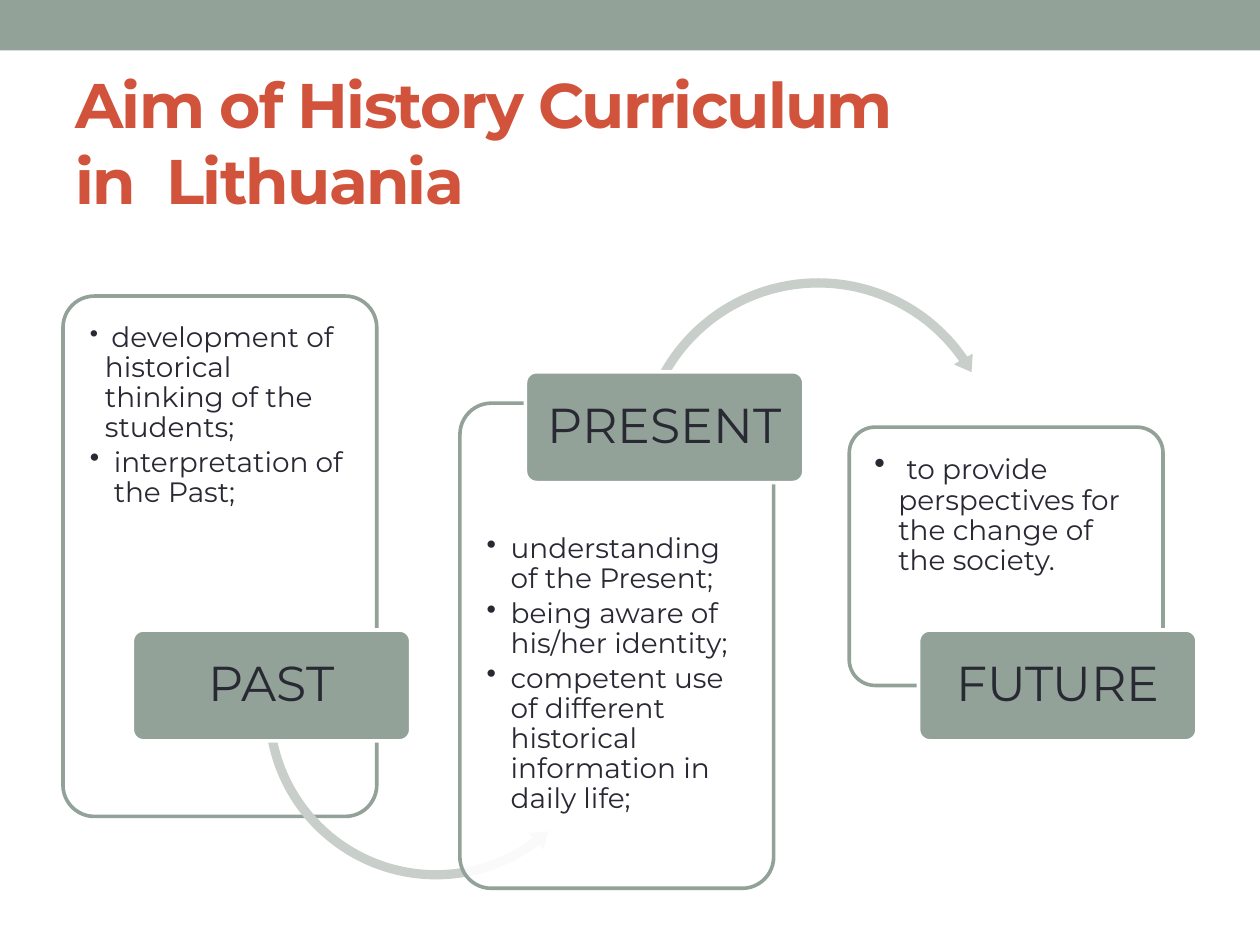
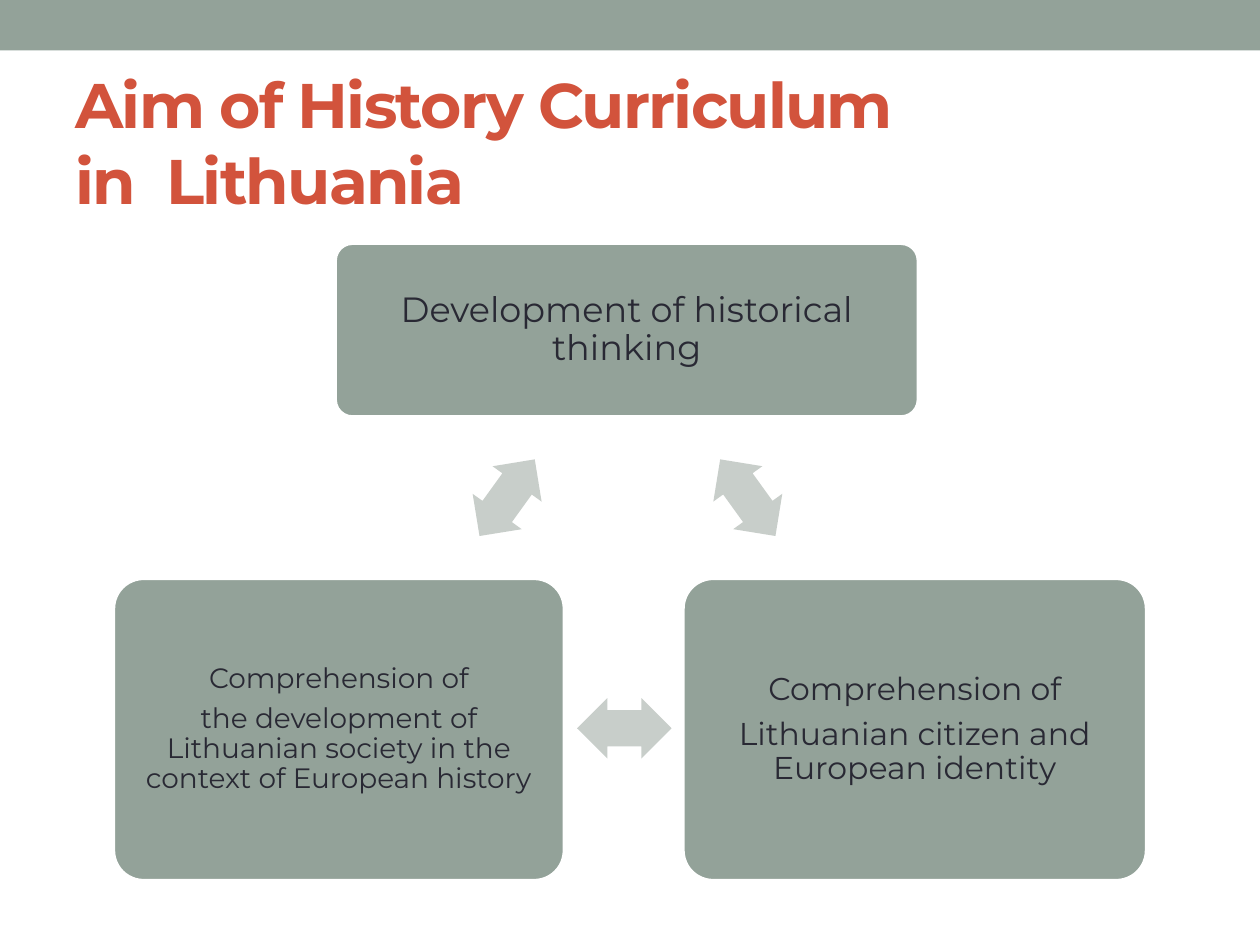
from dataclasses import dataclass

from lxml.etree import SubElement
from pptx import Presentation
from pptx.dml.color import RGBColor
from pptx.enum.shapes import MSO_SHAPE
from pptx.enum.text import MSO_ANCHOR, PP_ALIGN
from pptx.oxml.ns import qn
from pptx.util import Inches, Pt


@dataclass(frozen=True)
class Theme:
    font: str = "Montserrat"
    sage: RGBColor = RGBColor.from_string("93A299")
    pale_sage: RGBColor = RGBColor.from_string("C8CECA")
    red: RGBColor = RGBColor.from_string("D2533C")
    ink: RGBColor = RGBColor.from_string("292934")
    white: RGBColor = RGBColor.from_string("FFFFFF")
    title_size: int = 36
    label_size: int = 28
    bullet_size: int = 16
    outline: float = 2.08
    line_spacing: float = 0.9
    corner: float = 0.1


THEME = Theme()
TITLE = "Aim of History Curriculum\vin  Lithuania"


# Shared helpers
def style_run(run, size, color=THEME.ink, bold=False):
    run.font.name = THEME.font
    run.font.size = Pt(size)
    run.font.color.rgb = color
    run.font.bold = bold


def set_margins(frame, horizontal, vertical):
    frame.word_wrap = True
    frame.margin_left = frame.margin_right = Inches(horizontal)
    frame.margin_top = frame.margin_bottom = Inches(vertical)


def add_block(slide, kind, place, fill, outline=None):
    shape = slide.shapes.add_shape(kind, *map(Inches, place))
    shape.shadow.inherit = False
    shape.fill.solid()
    shape.fill.fore_color.rgb = fill
    if outline is None:
        shape.line.fill.background()
    else:
        shape.line.color.rgb = outline
        shape.line.width = Pt(THEME.outline)
    return shape


def add_round_box(slide, place, fill, outline):
    shape = add_block(slide, MSO_SHAPE.ROUNDED_RECTANGLE, place, fill, outline)
    shape.adjustments[0] = THEME.corner
    return shape


# Band and title on every slide
def add_titled_slide(presentation):
    slide = presentation.slides.add_slide(presentation.slide_layouts[6])
    add_block(slide, MSO_SHAPE.RECTANGLE, (0, 0, 10, 0.4), THEME.sage)
    title = slide.shapes.add_textbox(*map(Inches, (0.5, 0.58, 9, 1.08)))
    frame = title.text_frame
    frame.word_wrap = True
    frame.vertical_anchor = MSO_ANCHOR.MIDDLE
    paragraph = frame.paragraphs[0]
    paragraph.text = TITLE
    for run in paragraph.runs:
        style_run(run, THEME.title_size, THEME.red, bold=True)
        run._r.get_or_add_rPr().set("spc", "-100")
    return slide


# Filled box with centred text
def add_label(slide, place, lines, size, margins):
    box = add_round_box(slide, place, THEME.sage, THEME.white)
    frame = box.text_frame
    set_margins(frame, *margins)
    frame.vertical_anchor = MSO_ANCHOR.MIDDLE
    frame.text = "\n".join(lines)
    for paragraph in frame.paragraphs:
        paragraph.alignment = PP_ALIGN.CENTER
        paragraph.line_spacing = THEME.line_spacing
        paragraph.space_after = Pt(size * 0.35)
        style_run(paragraph.runs[0], size)


def set_bullet(paragraph, indent):
    properties = paragraph._p.get_or_add_pPr()
    properties.set("marL", str(Inches(indent)))
    properties.set("indent", str(-Inches(indent)))
    SubElement(properties, qn("a:buChar")).set("char", "•")


# Outlined panel; a bullet is (text, indent, size of a leading space or None)
def add_panel(slide, place, bullets, top_margin=0.14):
    panel = add_round_box(slide, place, THEME.white, THEME.sage)
    color = panel._element.spPr.find(qn("a:solidFill"))[0]
    SubElement(color, qn("a:alpha")).set("val", "90000")
    frame = panel.text_frame
    set_margins(frame, 0.14, 0.14)
    frame.margin_top = Inches(top_margin)
    frame.vertical_anchor = MSO_ANCHOR.TOP
    for index, (text, indent, lead_size) in enumerate(bullets):
        paragraph = frame.add_paragraph() if index else frame.paragraphs[0]
        paragraph.alignment = PP_ALIGN.LEFT
        paragraph.line_spacing = THEME.line_spacing
        paragraph.space_after = Pt(THEME.bullet_size * 0.15)
        set_bullet(paragraph, indent)
        if lead_size:
            lead = paragraph.add_run()
            lead.text = " "
            style_run(lead, lead_size)
        run = paragraph.add_run()
        run.text = text
        style_run(run, THEME.bullet_size)


def add_arrow(slide, kind, place, adjustments, rotation=0):
    arrow = add_block(slide, kind, place, THEME.pale_sage)
    for index, value in enumerate(adjustments):
        arrow.adjustments[index] = value
    arrow.rotation = rotation


# Past, present and future
def build_timeline(presentation):
    slide = add_titled_slide(presentation)

    def add_period(name, left, top):
        add_label(slide, (left, top, 2.21, 0.88), [name],
                  THEME.label_size, (0.06, 0.04))

    add_panel(slide, (0.5, 2.35, 2.49, 4.13), [
        ("development of historical thinking of the students;", 0.12, 14),
        ("interpretation of the Past;", 0.19, None),
    ])
    add_arrow(slide, MSO_SHAPE.LEFT_CIRCULAR_ARROW, (2.05, 4.21, 2.82, 2.82),
              (0.026, 3.197, 31.823, 101.116, 0.031))
    add_period("PAST", 1.05, 5)

    add_panel(slide, (3.65, 3.2, 2.49, 3.85), [
        ("understanding of the Present;", 0.19, None),
        ("being aware of his/her identity;", 0.19, None),
        ("competent use of different historical information in daily life;",
         0.19, None),
    ], top_margin=0.97)
    add_arrow(slide, MSO_SHAPE.CIRCULAR_ARROW, (5.01, 2.16, 2.97, 2.97),
              (0.025, 3.031, 195.214, 125.755, 0.029))
    add_period("PRESENT", 4.17, 2.95)

    add_panel(slide, (6.74, 3.39, 2.49, 2.05), [
        ("to provide perspectives for the change of the society.", 0.19, 18),
    ])
    add_period("FUTURE", 7.29, 5)


# Three linked aims
def build_aims(presentation):
    slide = add_titled_slide(presentation)
    aims = [
        ((2.66, 1.93, 4.63, 1.38), 20, 0.08,
         ["Development of historical thinking"]),
        ((5.42, 4.59, 3.68, 2.4), 18, 0.07,
         ["Comprehension of", "Lithuanian citizen and European identity"]),
        ((0.9, 4.59, 3.58, 2.4), 16, 0.07,
         ["Comprehension of", "the development of Lithuanian society "
          "in the context of European history"]),
    ]
    for place, size, margin, lines in aims:
        add_label(slide, place, lines, size, (margin, margin))
    for left, top, rotation in ((5.56, 3.71, 54.2), (4.58, 5.54, 180),
                                (3.65, 3.71, 305.8)):
        add_arrow(slide, MSO_SHAPE.LEFT_RIGHT_ARROW, (left, top, 0.75, 0.48),
                  (0.6, 0.5), rotation)


def main():
    presentation = Presentation()
    presentation.slide_width = Inches(10)
    presentation.slide_height = Inches(7.5)
    build_timeline(presentation)
    build_aims(presentation)
    presentation.save("out.pptx")


if __name__ == "__main__":
    main()
